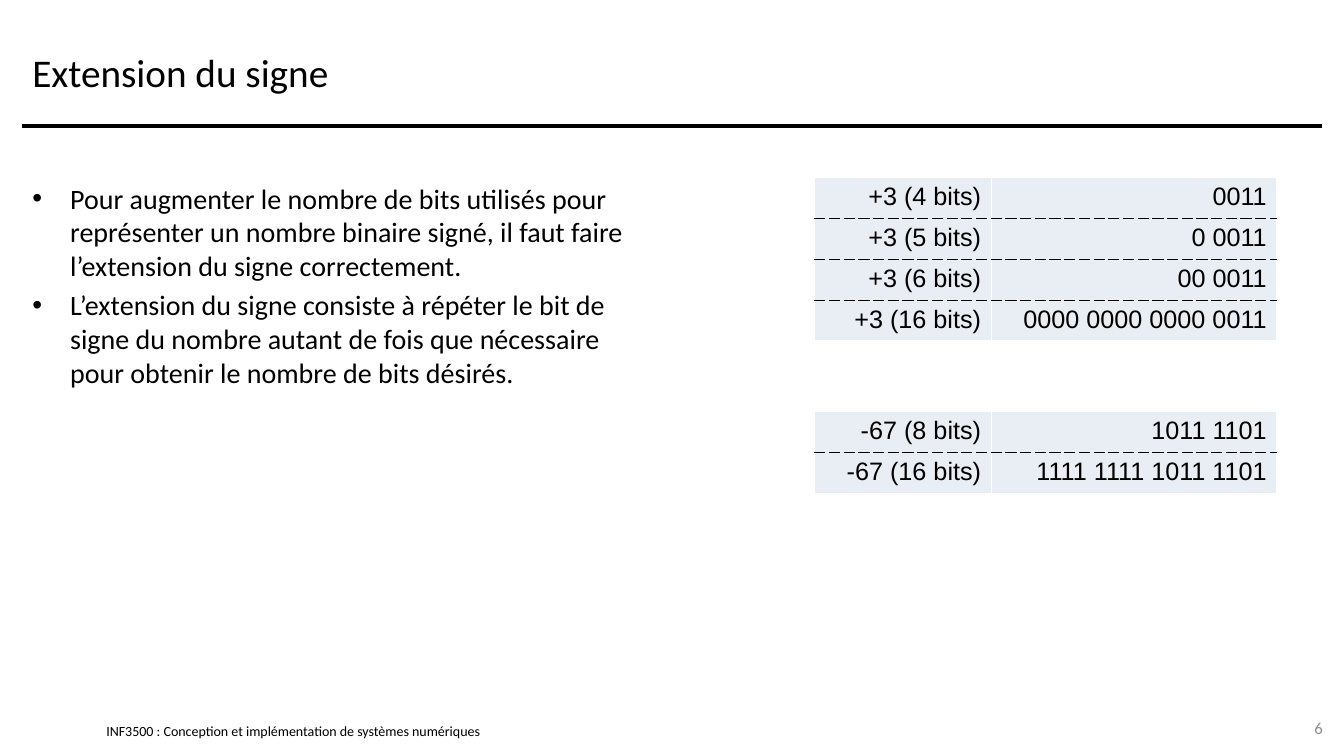
from lxml import etree
from pptx import Presentation
from pptx.dml.color import RGBColor
from pptx.enum.shapes import MSO_CONNECTOR
from pptx.enum.text import MSO_ANCHOR, PP_ALIGN
from pptx.oxml.ns import qn
from pptx.util import Pt

BLACK = RGBColor(0x00, 0x00, 0x00)
WHITE = RGBColor(0xFF, 0xFF, 0xFF)
GRAY = RGBColor(0x8C, 0x8C, 0x8C)
PALE_BLUE = RGBColor(0xE9, 0xED, 0xF4)
TOP, MIDDLE = MSO_ANCHOR.TOP, MSO_ANCHOR.MIDDLE
LEFT, RIGHT = PP_ALIGN.LEFT, PP_ALIGN.RIGHT
STRAIGHT = MSO_CONNECTOR.STRAIGHT

COLUMN_WIDTHS = (126, 204)
ROW_HEIGHT = 29.2
BULLET_INDENT = 27
BULLETS = (
    "Pour augmenter le nombre de bits utilisés pour représenter un nombre binaire signé, "
    "il faut faire l’extension du signe correctement.",
    "L’extension du signe consiste à répéter le bit de signe du nombre autant de fois "
    "que nécessaire pour obtenir le nombre de bits désirés.",
)
POSITIVE_ROWS = (
    ("+3 (4 bits)", "0011"),
    ("+3 (5 bits)", "0 0011"),
    ("+3 (6 bits)", "00 0011"),
    ("+3 (16 bits)", "0000 0000 0000 0011"),
)
NEGATIVE_ROWS = (
    ("-67 (8 bits)", "1011 1101"),
    ("-67 (16 bits)", "1111 1111 1011 1101"),
)


def write(para, text, size=18, font="Calibri", color=BLACK, align=LEFT):
    """Put one formatted span of text into a paragraph."""
    para.alignment = align
    span = para.add_run()
    span.text = text
    span.font.size = Pt(size)
    span.font.name = font
    span.font.color.rgb = color


def add_frame(page, box, anchor=TOP, inset=(7.2, 3.6)):
    """Add a wrapping text box and return its text frame."""
    frame = page.shapes.add_textbox(*map(Pt, box)).text_frame
    frame.word_wrap = True
    frame.vertical_anchor = anchor
    frame.margin_left = frame.margin_right = Pt(inset[0])
    frame.margin_top = frame.margin_bottom = Pt(inset[1])
    return frame


def add_header(page, box):
    """Write the title with a thick rule along the bottom of the box."""
    left, top, width, height = box
    write(add_frame(page, box, MIDDLE).paragraphs[0], "Extension du signe", size=28)
    bottom = top + height
    rule = page.shapes.add_connector(
        STRAIGHT, Pt(left), Pt(bottom), Pt(left + width), Pt(bottom))
    rule.line.color.rgb = BLACK
    rule.line.width = Pt(3)
    etree.SubElement(rule.element.spPr, qn("a:effectLst"))


def add_bullets(page, box):
    """Write the bulleted explanation."""
    frame = add_frame(page, box)
    for index, text in enumerate(BULLETS):
        para = frame.add_paragraph() if index else frame.paragraphs[0]
        properties = para._p.get_or_add_pPr()
        properties.set("marL", str(Pt(BULLET_INDENT)))
        properties.set("indent", str(-Pt(BULLET_INDENT)))
        etree.SubElement(properties, qn("a:buFont"), typeface="Arial")
        etree.SubElement(properties, qn("a:buChar"), char="•")
        para.space_before = Pt(4 if index else 0)
        write(para, text, size=20)


def set_border(cell, side, color, dash):
    """Draw one border of a table cell."""
    line = etree.SubElement(cell._tc.get_or_add_tcPr(), qn("a:" + side), w=str(Pt(1)))
    fill = etree.SubElement(line, qn("a:solidFill"))
    etree.SubElement(fill, qn("a:srgbClr"), val=str(color))
    etree.SubElement(line, qn("a:prstDash"), val=dash)


def add_bit_table(page, left, top, rows):
    """Add a two-column table with dashed lines between its rows."""
    table = page.shapes.add_table(
        len(rows), len(COLUMN_WIDTHS), Pt(left), Pt(top),
        Pt(sum(COLUMN_WIDTHS)), Pt(ROW_HEIGHT * len(rows))).table
    table.first_row = table.horz_banding = False
    for column, width in zip(table.columns, COLUMN_WIDTHS):
        column.width = Pt(width)
    plain, dashed = (WHITE, "solid"), (BLACK, "lgDash")
    for row_index, texts in enumerate(rows):
        table.rows[row_index].height = Pt(ROW_HEIGHT)
        above = dashed if row_index else plain
        below = dashed if row_index < len(rows) - 1 else plain
        borders = {"lnL": plain, "lnR": plain, "lnT": above, "lnB": below}
        for column_index, text in enumerate(texts):
            cell = table.cell(row_index, column_index)
            for side, (color, dash) in borders.items():
                set_border(cell, side, color, dash)
            cell.fill.solid()
            cell.fill.fore_color.rgb = PALE_BLUE
            write(cell.text_frame.paragraphs[0], text, font="Arial", align=RIGHT)


def add_footer(page, course_box, number_box):
    """Write the course name and the page number."""
    course = add_frame(page, course_box, MIDDLE, inset=(0, 0))
    write(course.paragraphs[0],
          "INF3500 : Conception et implémentation de systèmes numériques", size=10)
    number = add_frame(page, number_box, MIDDLE)
    write(number.paragraphs[0], "6", size=12, color=GRAY, align=RIGHT)


def main():
    """Build the slide and save it."""
    deck = Presentation()
    deck.slide_width, deck.slide_height = Pt(960), Pt(540)
    page = deck.slides.add_slide(deck.slide_layouts[6])
    add_header(page, (16, 12, 928, 78))
    add_bullets(page, (16, 126, 456, 366))
    add_bit_table(page, 582, 126.8, POSITIVE_ROWS)
    add_bit_table(page, 582, 294, NEGATIVE_ROWS)
    add_footer(page, (76, 516, 368, 12), (904, 505.5, 48, 29))
    deck.save("out.pptx")


if __name__ == "__main__":
    main()
